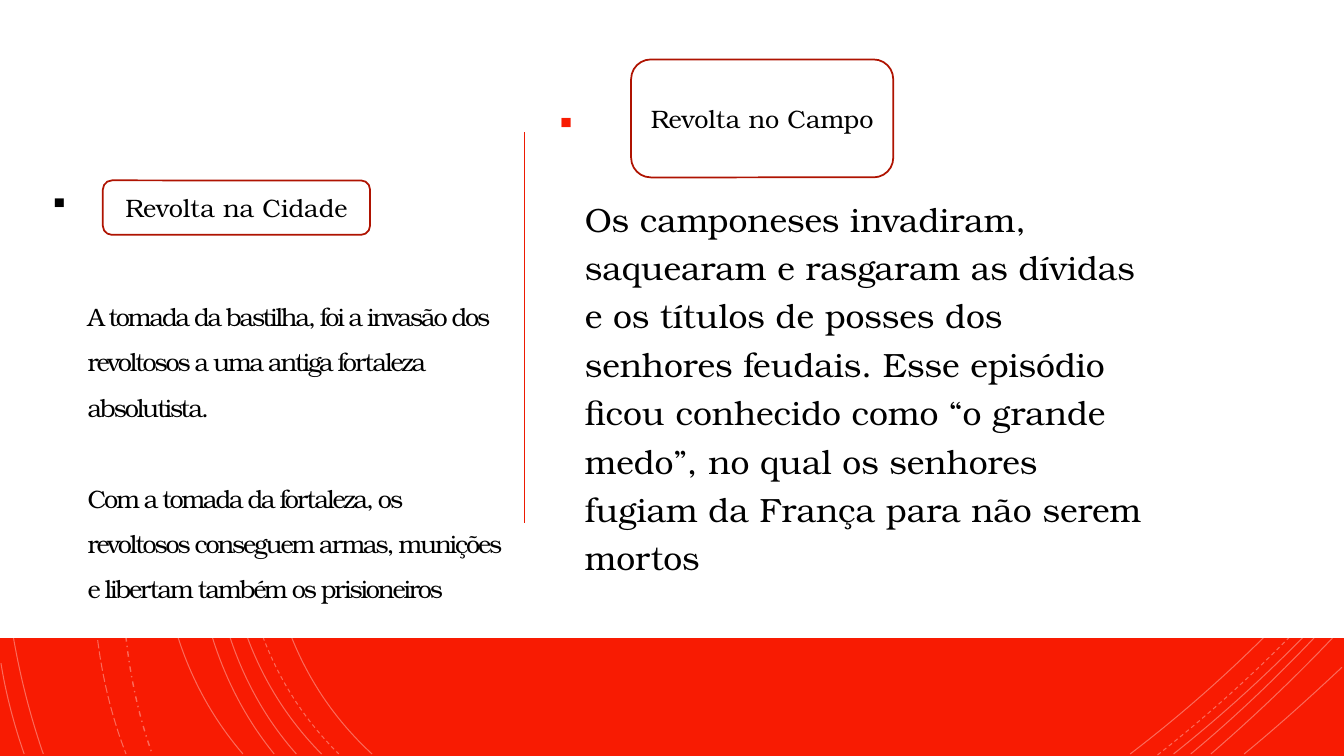
"""Build the slide on the city and country revolts of the French Revolution."""
import copy
import pptx
import pptx.dml.color
import pptx.enum.dml
import pptx.enum.shapes
import pptx.enum.text
import pptx.oxml
import pptx.oxml.ns
import pptx.util

Inches, Pt = pptx.util.Inches, pptx.util.Pt
SHAPES = pptx.enum.shapes.MSO_SHAPE
DASH = pptx.enum.dml.MSO_LINE
ALIGN = pptx.enum.text.PP_ALIGN
MIDDLE = pptx.enum.text.MSO_ANCHOR.MIDDLE
FONT = "TeX Gyre Bonum"
NS = 'xmlns:a="http://schemas.openxmlformats.org/drawingml/2006/main"'
qn = pptx.oxml.ns.qn


def paint(fmt, color):
    """Give a fill, or the fill of a line or font, a solid hex colour."""
    fmt.solid()
    fmt.fore_color.rgb = pptx.dml.color.RGBColor.from_string(color)


def add_box(kind, left, top, width, height, color):
    """Add a flat preset shape without an outline."""
    box = slide.shapes.add_shape(kind, Inches(left), Inches(top), Inches(width), Inches(height))
    box.shadow.inherit = False
    paint(box.fill, color)
    box.line.fill.background()
    return box


deck = pptx.Presentation()
deck.slide_width, deck.slide_height = Inches(13.33), Inches(7.5)
slide = deck.slides.add_slide(deck.slide_layouts[1])
tree = slide.shapes._spTree

add_box(SHAPES.RECTANGLE, 0, 0, 13.33, 7.5, "F81B02")

curves = [
    ((5.65, 0), (3.15, 1.15), (1.43, 5.4), (3.69, 7.48), DASH.SOLID),
    ((5.25, 0), (2.85, 1.25), (1.23, 5.37), (3.36, 7.48), DASH.DASH),
    ((5.06, 0), (2.7, 1.27), (1.1, 5.37), (3.19, 7.48), DASH.SOLID),
    ((4.64, 0), (2.44, 1.33), (1.1, 5.41), (2.94, 7.48), DASH.SOLID),
    ((4.51, 0), (2.31, 1.38), (0.97, 5.33), (2.72, 7.48), DASH.SOLID),
    ((4.27, 0), (2.17, 1.47), (0.53, 5.29), (2.41, 7.48), DASH.SOLID),
    ((3.63, 0), (1.76, 1.66), (0.65, 5.09), (1.51, 7.48), DASH.DASH_DOT),
    ((3.51, 0), (1.57, 1.69), (0.29, 4.99), (1.25, 7.48), DASH.LONG_DASH),
    ((2.17, 0), (0.11, 1.85), (-0.46, 4.9), (0.43, 7.48), DASH.SOLID),
    ((0.01, 6.58), (0.06, 6.89), (0.14, 7.19), (0.24, 7.48), DASH.SOLID),
    ((11.21, 7.48), (11.97, 6.9), (12.69, 6.22), (13.31, 5.48), DASH.SOLID),
    ((11.48, 7.49), (12.13, 6.98), (12.75, 6.4), (13.3, 5.77), DASH.DASH),
    ((11.64, 7.48), (12.23, 7.01), (12.8, 6.48), (13.31, 5.91), DASH.SOLID),
    ((11.81, 7.48), (12.34, 7.04), (12.84, 6.55), (13.31, 6.03), DASH.SOLID),
    ((12.01, 7.48), (12.46, 7.09), (12.9, 6.67), (13.31, 6.23), DASH.SOLID),
    ((12.34, 7.48), (12.67, 7.21), (12.99, 6.92), (13.31, 6.62), DASH.SOLID),
]
for *points, dash in curves:
    start, *pulls = [(Inches(x), Inches(y)) for x, y in points]
    pen = slide.shapes.build_freeform(*start)
    pen.add_line_segments(pulls, close=False)
    curve = pen.convert_to_shape()
    route = curve._element.find(".//" + qn("a:path"))
    bend = pptx.oxml.parse_xml(f"<a:cubicBezTo {NS}/>")
    for side in route.findall(qn("a:lnTo")):
        bend.append(side[0])
        route.remove(side)
    route.append(bend)
    curve.shadow.inherit = False
    curve.fill.background()
    paint(curve.line.fill, "FFFFFF")
    curve.line.width = Pt(1 if dash == DASH.DASH_DOT else 0.75)
    curve.line.dash_style = dash
    tint = curve.line._ln.find(".//" + qn("a:srgbClr"))
    tint.append(pptx.oxml.parse_xml(f'<a:alpha {NS} val="35000"/>'))

add_box(SHAPES.RECTANGLE, 0, 0, 13.33, 6.33, "FFFFFF")

city = (
    "\v\vA tomada da bastilha, foi a invasão dos revoltosos a uma antiga fortaleza\v"
    "absolutista. \v\vCom a tomada da fortaleza, os revoltosos conseguem armas, "
    "munições e libertam também os prisioneiros"
)
country = (
    "\v\vOs camponeses invadiram, saquearam e rasgaram as dívidas e os títulos de "
    "posses dos senhores feudais. Esse episódio ficou conhecido como “o grande medo”, "
    "no qual os senhores fugiam da França para não serem mortos"
)
blocks = [
    (slide.shapes.title, city, (0.24, 1.05, 5.01, 5.53), 0.25, 0.38, 18, 1.5, 0, -150, "000000", 80),
    (slide.placeholders[1], country, (5.45, 1.05, 6.03, 4.56), 0.1, 0.25, 24, 1.2, 10, 0, "F81B02", 110),
]
for holder, text, place, inset, indent, size, lead, before, track, color, scale in blocks:
    tree.append(holder._element)
    holder.left, holder.top, holder.width, holder.height = map(Inches, place)
    frame = holder.text_frame
    frame.word_wrap = True
    frame.auto_size = pptx.enum.text.MSO_AUTO_SIZE.NONE
    frame.vertical_anchor = MIDDLE
    frame.margin_left = frame.margin_right = Inches(inset)
    frame.margin_top = frame.margin_bottom = Inches(inset if inset > 0.1 else 0.05)
    para = frame.paragraphs[0]
    para.text = text
    para.alignment = ALIGN.LEFT
    para.line_spacing = lead
    para.space_before = Pt(before)
    for run in para.runs:
        run.font.name, run.font.size, run.font.bold = FONT, Pt(size), False
        paint(run.font.fill, "000000")
        run.font._element.set("spc", str(track))
    for index, gap in enumerate(para._p.findall(qn("a:br"))):
        props = copy.deepcopy(para.runs[0].font._element)
        props.set("sz", "2400" if index < 2 else str(size * 100))
        gap.append(props)
    layout = para._p.get_or_add_pPr()
    layout.set("marL", str(Inches(indent)))
    layout.set("indent", str(-Inches(indent)))
    for bullet in (
        f'<a:buClr {NS}><a:srgbClr val="{color}"/></a:buClr>',
        f'<a:buSzPct {NS} val="{scale}000"/>',
        f'<a:buChar {NS} char="▪"/>',
    ):
        layout.append(pptx.oxml.parse_xml(bullet))

rule = slide.shapes.add_connector(
    pptx.enum.shapes.MSO_CONNECTOR.STRAIGHT, Inches(5.2), Inches(1.31), Inches(5.2), Inches(5.19)
)
paint(rule.line.fill, "ED1A02")
rule.line.width = Pt(1)
rule._element.spPr.append(pptx.oxml.parse_xml(f"<a:effectLst {NS}/>"))

labels = [
    ("Revolta na Cidade", 1.02, 1.79, 2.65, 0.54),
    ("Revolta no Campo", 6.26, 0.59, 2.6, 1.17),
]
for text, *place in labels:
    label = add_box(SHAPES.ROUNDED_RECTANGLE, *place, "FFFFFF")
    paint(label.line.fill, "AF1301")
    label.line.width = Pt(1.25)
    frame = label.text_frame
    frame.text = text
    frame.word_wrap = True
    frame.vertical_anchor = MIDDLE
    para = frame.paragraphs[0]
    para.alignment = ALIGN.CENTER
    font = para.runs[0].font
    font.name, font.size = FONT, Pt(18)
    paint(font.fill, "000000")

deck.save("out.pptx")
